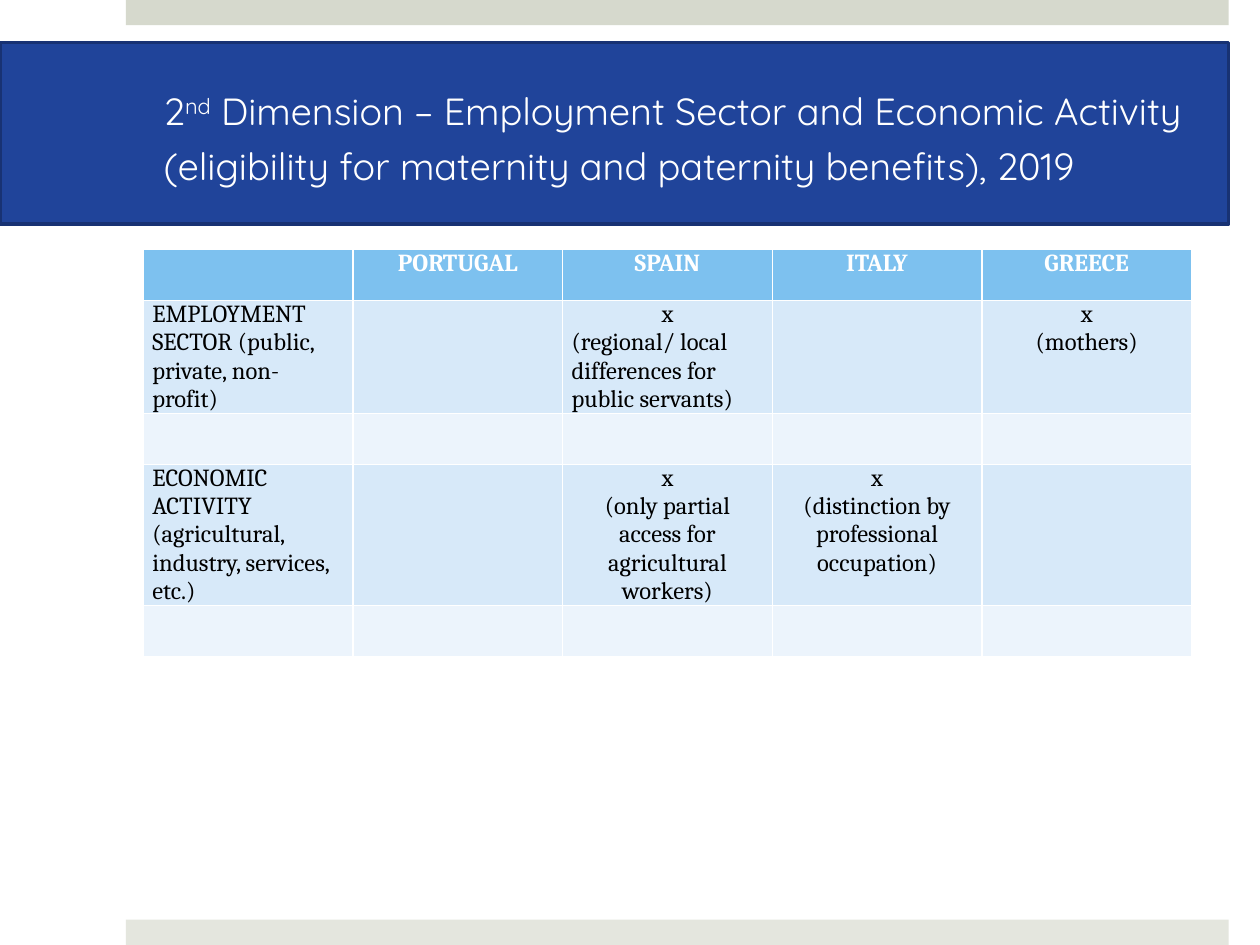
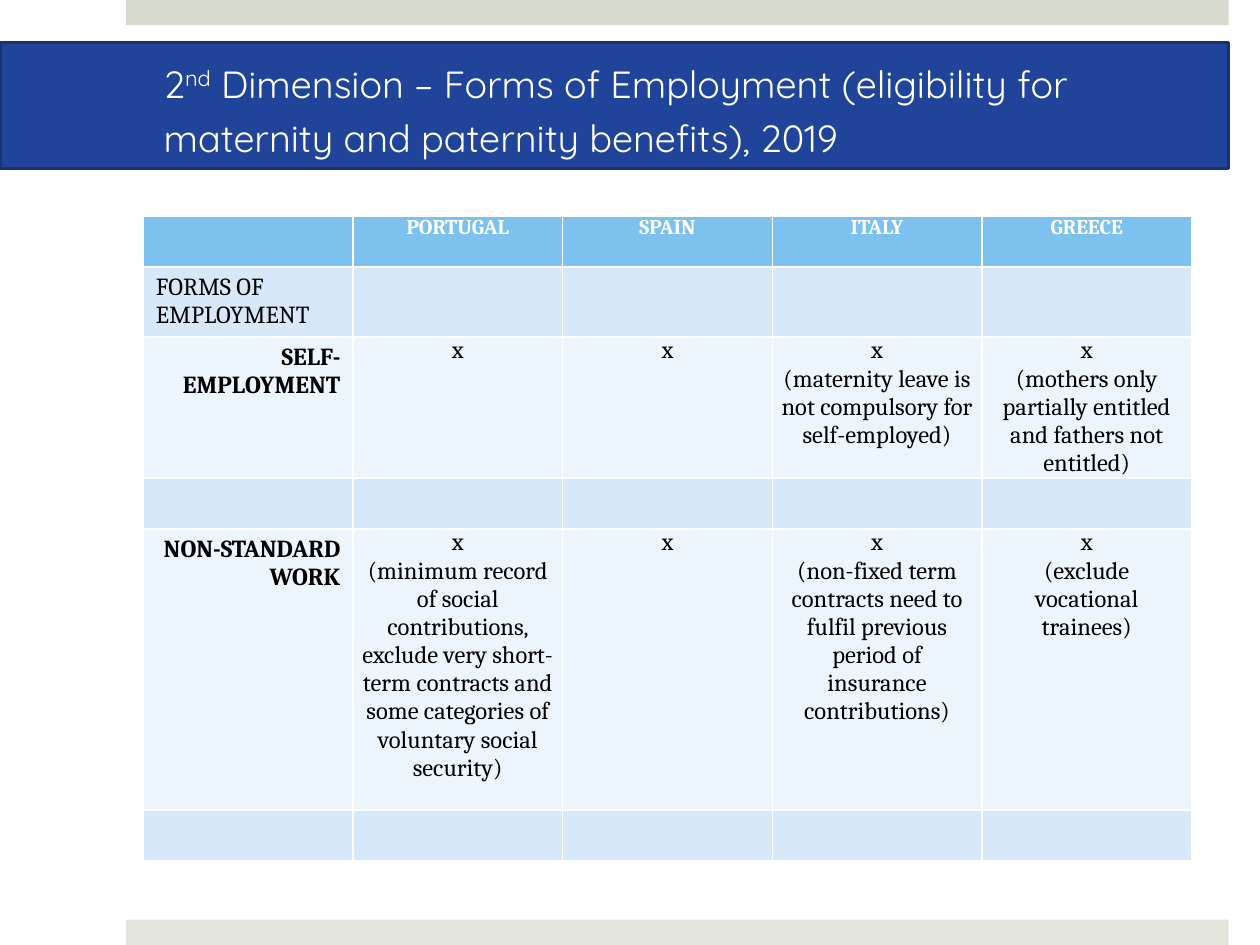
from collections import namedtuple
from dataclasses import dataclass

from pptx import Presentation
from pptx.dml.color import RGBColor
from pptx.enum.shapes import MSO_SHAPE
from pptx.enum.text import MSO_ANCHOR, PP_ALIGN
from pptx.util import Cm, Pt

LEFT, CENTER, RIGHT = PP_ALIGN.LEFT, PP_ALIGN.CENTER, PP_ALIGN.RIGHT


@dataclass(frozen=True)
class Theme:
    white: str = "FFFFFF"
    ink: str = "000000"
    top_strip: str = "D6D9CD"
    bottom_strip: str = "E4E6DE"
    band: str = "20449A"
    band_line: str = "183273"
    header: str = "7DC1EF"
    rows: tuple = ("D7E9F9", "ECF4FC")
    title_font: str = "Quicksand"
    table_font: str = "Cambria"
    title_size: float = 21.6
    body_size: float = 14


THEME = Theme()

# Content: note_align places the paragraph below the "x"
Entry = namedtuple("Entry", "text align note_align bold roomy",
                   defaults=(CENTER, CENTER, False, False))


def label(text):
    return Entry(text, LEFT, LEFT)


def form(text, align=RIGHT, bold=True):
    """Row label with the wider default cell margins."""
    return Entry(text, align, align, bold, True)


def mark(note="", align=CENTER):
    return Entry(f"x\n{note}" if note else "x", CENTER, align)


COUNTRIES = ["PORTUGAL", "SPAIN", "ITALY", "GREECE"]

SLIDES = [
    {
        "title": "Employment Sector and Economic Activity "
                 "(eligibility for maternity and paternity benefits), 2019",
        "band_height": 3.66,
        "table_top": 5.03,
        "header_size": 14,
        # row height in cm, then entries by column
        "rows": [
            (2.27, {0: label("EMPLOYMENT SECTOR (public, private, non-profit)"),
                    2: mark("(regional/ local differences for public servants)", LEFT),
                    4: mark("(mothers)")}),
            (1.03, {}),
            (2.83, {0: label("ECONOMIC ACTIVITY (agricultural, industry, services, etc.)"),
                    2: mark("(only partial access for agricultural workers)"),
                    3: mark("(distinction by professional occupation)")}),
            (1.03, {}),
        ],
    },
    {
        "title": "Forms of Employment "
                 "(eligibility for maternity and paternity benefits), 2019",
        "band_height": 2.54,
        "table_top": 4.35,
        "header_size": 12,
        "rows": [
            (1.41, {0: form("FORMS OF EMPLOYMENT", LEFT, False)}),
            (2.83, {0: form("SELF-EMPLOYMENT"),
                    1: mark(),
                    2: mark(),
                    3: mark("(maternity leave is not compulsory for self-employed)"),
                    4: mark("(mothers only partially entitled and fathers not entitled)")}),
            (1.03, {}),
            (5.67, {0: form("NON-STANDARD WORK"),
                    1: mark("(minimum record of social contributions, exclude very "
                            "short-term contracts and some categories of voluntary "
                            "social security)"),
                    2: mark(),
                    3: mark("(non-fixed term contracts need to fulfil previous "
                            "period of insurance contributions)"),
                    4: mark("(exclude vocational trainees)")}),
            (1.03, {}),
        ],
    },
]

# Layout, in cm
SLIDE_W, SLIDE_H = 25.4, 19.05
RIGHT_EDGE = 24.77
STRIP_LEFT, STRIP_H = 2.54, 0.51
BAND_TOP = 0.86
TABLE_LEFT, TABLE_W = 2.89, 21.13
HEADER_H = 1.03
CELL_MARGIN = 0.18


def paint(target, color):
    target.fill.solid()
    target.fill.fore_color.rgb = RGBColor.from_string(color)


def style(r, font, size, color, bold=False):
    r.font.name, r.font.size, r.font.bold = font, Pt(size), bold
    r.font.color.rgb = RGBColor.from_string(color)


def add_rect(s, left, top, width, height, color):
    sp = s.shapes.add_shape(MSO_SHAPE.RECTANGLE, Cm(left), Cm(top), Cm(width), Cm(height))
    sp.shadow.inherit = False
    paint(sp, color)
    sp.line.fill.background()
    return sp


def add_strips(s):
    for top, color in ((0, THEME.top_strip), (SLIDE_H - STRIP_H, THEME.bottom_strip)):
        add_rect(s, STRIP_LEFT, top, RIGHT_EDGE - STRIP_LEFT, STRIP_H, color)


def add_title(s, title, height):
    sp = add_rect(s, 0, BAND_TOP, RIGHT_EDGE, height, THEME.band)
    sp.line.color.rgb = RGBColor.from_string(THEME.band_line)
    sp.line.width = Pt(2)
    tf = sp.text_frame
    tf.word_wrap = True
    tf.vertical_anchor = MSO_ANCHOR.MIDDLE
    tf.margin_left, tf.margin_right = Cm(3.3), Cm(0.76)
    p = tf.paragraphs[0]
    p.alignment, p.line_spacing = LEFT, 1.2
    for text in ("2", "nd", f" Dimension – {title}"):
        r = p.add_run()
        r.text = text
        style(r, THEME.title_font, THEME.title_size, THEME.white)
    p.runs[1]._r.get_or_add_rPr().set("baseline", "30000")


def write_cell(cell, entry, size, color):
    if not entry.roomy:
        cell.margin_left = cell.margin_right = Cm(CELL_MARGIN)
        cell.margin_top = cell.margin_bottom = 0
    cell.text_frame.text = entry.text
    for i, p in enumerate(cell.text_frame.paragraphs):
        p.alignment = entry.note_align if i else entry.align
        for r in p.runs:
            style(r, THEME.table_font, size, color, entry.bold)


def add_country_table(s, top, header_size, rows):
    header = {c: Entry(name, bold=True) for c, name in enumerate(COUNTRIES, 1)}
    all_rows = [(HEADER_H, header), *rows]
    n_cols = len(COUNTRIES) + 1
    height = sum(h for h, _ in all_rows)
    table = s.shapes.add_table(len(all_rows), n_cols, Cm(TABLE_LEFT), Cm(top),
                               Cm(TABLE_W), Cm(height)).table
    for column in table.columns:
        column.width = Cm(TABLE_W / n_cols)
    for i, (row_height, entries) in enumerate(all_rows):
        table.rows[i].height = Cm(row_height)
        fill = THEME.rows[(i - 1) % 2] if i else THEME.header
        size, color = (THEME.body_size, THEME.ink) if i else (header_size, THEME.white)
        for c in range(n_cols):
            paint(table.cell(i, c), fill)
            if c in entries:
                write_cell(table.cell(i, c), entries[c], size, color)


def main():
    prs = Presentation()
    prs.slide_width, prs.slide_height = Cm(SLIDE_W), Cm(SLIDE_H)
    for content in SLIDES:
        s = prs.slides.add_slide(prs.slide_layouts[6])
        add_strips(s)
        add_title(s, content["title"], content["band_height"])
        add_country_table(s, content["table_top"], content["header_size"], content["rows"])
    prs.save("out.pptx")


if __name__ == "__main__":
    main()
